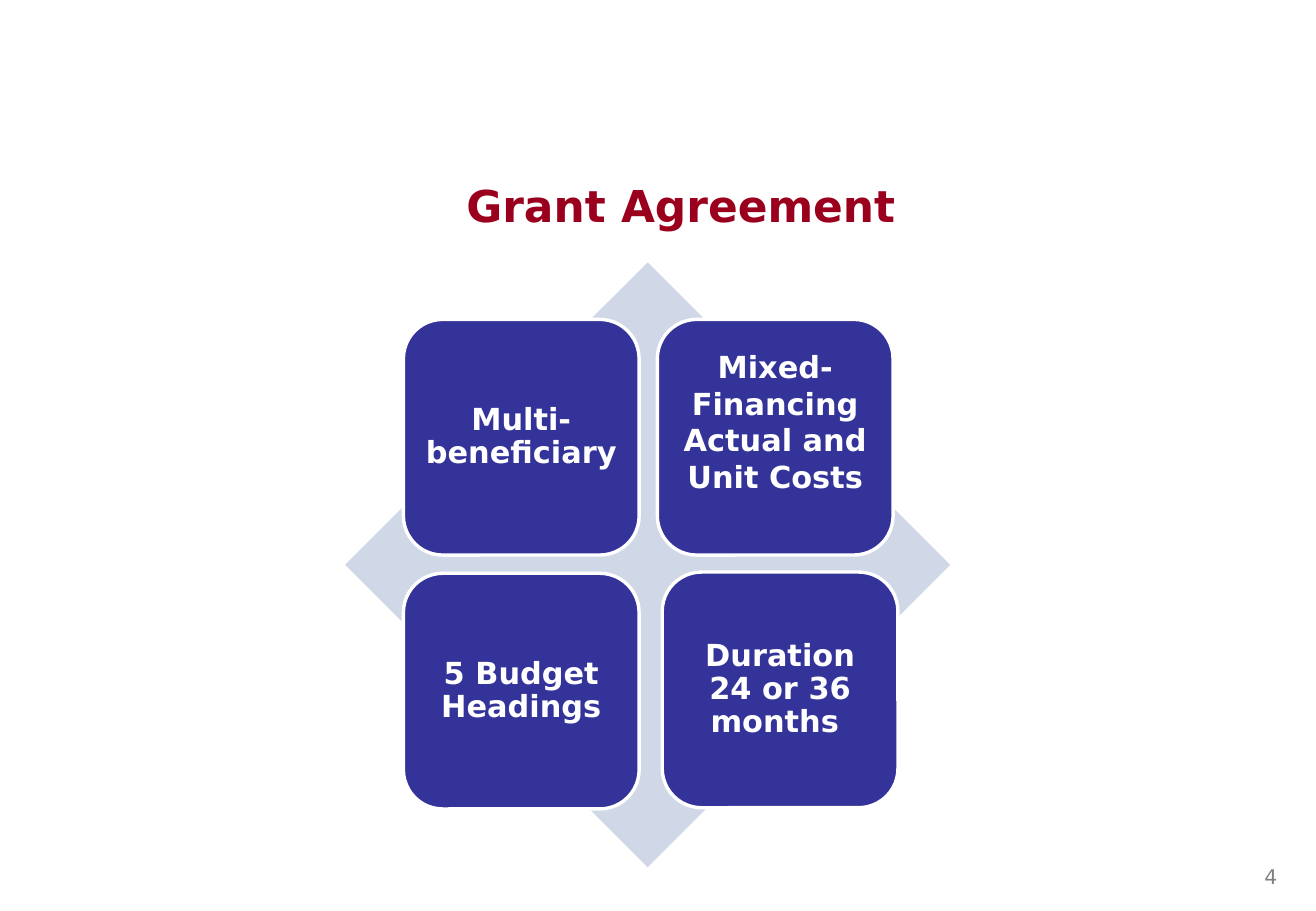
from dataclasses import dataclass

import pptx
import pptx.dml.color
import pptx.enum.shapes
import pptx.enum.text
import pptx.util

EMU_PER_PX = 9144
FONT = "DejaVu Sans"
COLOURS = {
    "title": "9A001D",
    "diamond": "D0D8E8",
    "tile": "333399",
    "white": "FFFFFF",
    "number": "808080",
}
TILE_SIZE = 194
INSET = 7
Align = pptx.enum.text.PP_ALIGN
Anchor = pptx.enum.text.MSO_ANCHOR
Preset = pptx.enum.shapes.MSO_SHAPE


@dataclass(frozen=True)
class Label:
    text: str
    size: int
    colour: str
    bold: bool = True
    align: Align = Align.CENTER
    anchor: Anchor = Anchor.MIDDLE
    spacing: float = 1.0
    insets: tuple[int, int, int, int] = (10, 5, 10, 5)


@dataclass(frozen=True)
class Tile:
    left: int
    top: int
    text: str
    spacing: float = 0.9
    bottom_inset: int = INSET


TILES = [
    Tile(332, 263, "Multi-beneficiary"),
    Tile(541, 263, "Mixed-Financing Actual and Unit Costs", 1.0, 33),
    Tile(332, 472, "5 Budget Headings"),
    Tile(545, 471, "Duration 24 or 36 months "),
]


def px(length: int) -> pptx.util.Emu:
    return pptx.util.Emu(length * EMU_PER_PX)


def colour(name: str) -> pptx.dml.color.RGBColor:
    return pptx.dml.color.RGBColor.from_string(COLOURS[name])


def write(box, label: Label) -> None:
    frame = box.text_frame
    frame.word_wrap = True
    frame.vertical_anchor = label.anchor
    left, top, right, bottom = label.insets
    frame.margin_left, frame.margin_top = px(left), px(top)
    frame.margin_right, frame.margin_bottom = px(right), px(bottom)
    para = frame.paragraphs[0]
    para.alignment = label.align
    para.line_spacing = label.spacing
    span = para.add_run()
    span.text = label.text
    span.font.name = FONT
    span.font.size = pptx.util.Pt(label.size)
    span.font.bold = label.bold
    span.font.color.rgb = colour(label.colour)


def add_text(page, left: int, top: int, width: int, height: int, label: Label) -> None:
    write(page.shapes.add_textbox(px(left), px(top), px(width), px(height)), label)


def add_square(page, preset: Preset, left: int, top: int, size: int, fill: str):
    shape = page.shapes.add_shape(preset, px(left), px(top), px(size), px(size))
    shape.shadow.inherit = False
    shape.fill.solid()
    shape.fill.fore_color.rgb = colour(fill)
    shape.line.fill.background()
    return shape


def add_tile(page, tile: Tile) -> None:
    shape = add_square(page, Preset.ROUNDED_RECTANGLE, tile.left, tile.top, TILE_SIZE, "tile")
    shape.line.color.rgb = colour("white")
    shape.line.width = pptx.util.Pt(2)
    insets = (INSET, INSET, INSET, tile.bottom_inset)
    write(shape, Label(tile.text, 18, "white", spacing=tile.spacing, insets=insets))


def main() -> None:
    deck = pptx.Presentation()
    deck.slide_width, deck.slide_height = px(1083), px(750)
    page = deck.slides.add_slide(deck.slide_layouts[6])
    title = Label("Grant Agreement", 26, "title", insets=(35, 5, 10, 5))
    add_text(page, 30, 132, 1036, 73, title)
    add_square(page, Preset.DIAMOND, 284, 216, 498, "diamond")
    for tile in TILES:
        add_tile(page, tile)
    number = Label("4", 12, "number", bold=False, align=Align.RIGHT, anchor=Anchor.TOP)
    add_text(page, 808, 707, 253, 52, number)
    deck.save("out.pptx")


if __name__ == "__main__":
    main()
